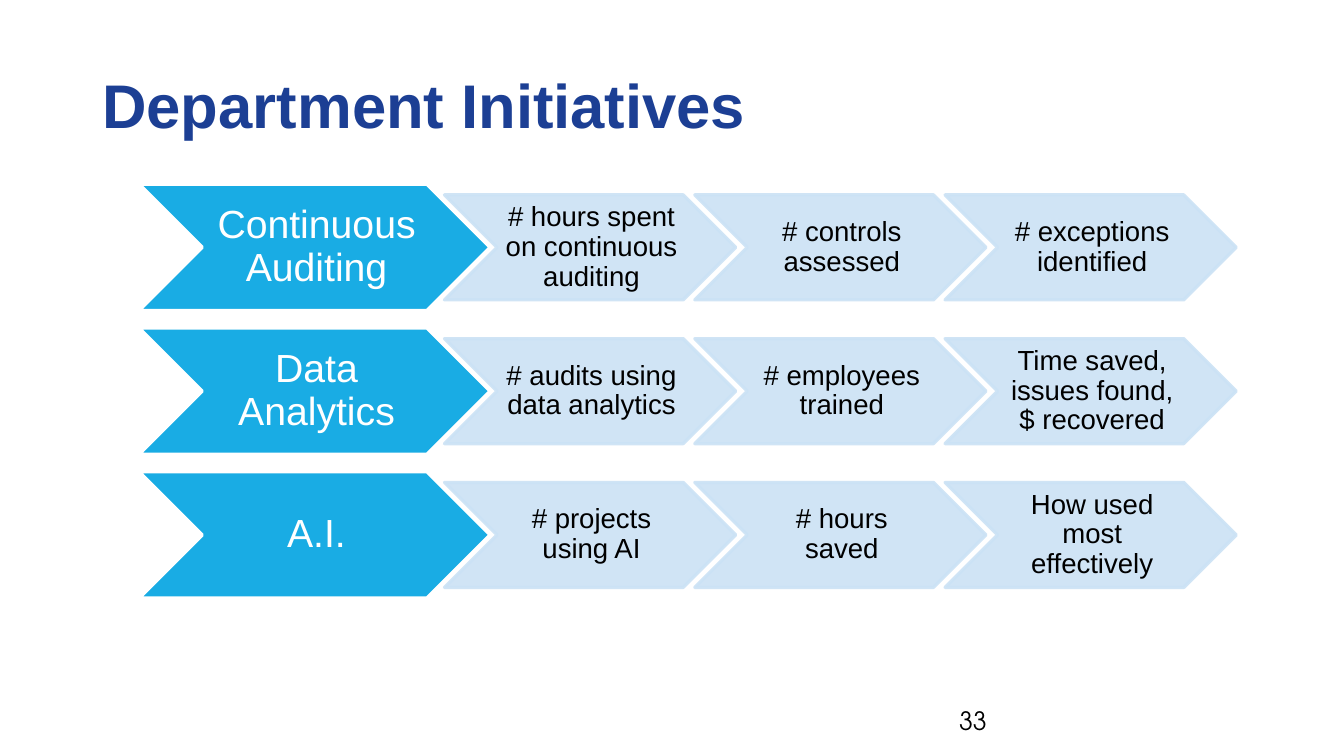
"""Build the Department Initiatives slide: three rows of chevrons with measures."""
from lxml import etree
from pptx import Presentation
from pptx.dml.color import RGBColor
from pptx.enum.shapes import MSO_SHAPE
from pptx.enum.text import MSO_ANCHOR, PP_ALIGN
from pptx.oxml.ns import qn
from pptx.util import Pt

CHEVRON = MSO_SHAPE.CHEVRON
MIDDLE, BOTTOM = MSO_ANCHOR.MIDDLE, MSO_ANCHOR.BOTTOM
LEFT, CENTER = PP_ALIGN.LEFT, PP_ALIGN.CENTER

TITLE = "Department Initiatives"
PAGE_NUMBER = "33"
INITIATIVES = [
    ("Continuous Auditing",
     ["# hours spent on continuous auditing", "# controls assessed", "# exceptions identified"]),
    ("Data Analytics",
     ["# audits using data analytics", "# employees trained",
      "Time saved, issues found, $ recovered"]),
    ("A.I.",
     ["# projects using AI", "# hours saved", "How used most effectively"]),
]

COLORS = {"title": "1C3F94", "initiative": "19ACE4", "measure": "CBE2F5",
          "white": "FFFFFF", "black": "000000"}
BODY_FONT, NUMBER_FONT = "Arial", "TeX Gyre Adventor"

ROW_TOP, ROW_PITCH = 131.6, 102.7
HEAD_LEFT, HEAD_WIDTH, HEAD_HEIGHT = 99.4, 250.6, 90.2
HEAD_TEXT_WIDTH = 150.4
MEASURE_LEFT, MEASURE_PITCH = 317.5, 178.8
MEASURE_WIDTH, MEASURE_HEIGHT = 208, 75
MEASURE_TEXT_WIDTH = 125.2
LINE_WIDTH = 2.33


def color(name):
    return RGBColor.from_string(COLORS[name])


def add_text(page, frame, text, size, ink, insets, font=BODY_FONT,
             align=LEFT, anchor=MIDDLE, bold=False, spacing=1.0):
    box = page.shapes.add_textbox(*map(Pt, frame))
    body = box.text_frame
    body.word_wrap = True
    body.vertical_anchor = anchor
    body.margin_left, body.margin_top, body.margin_right, body.margin_bottom = map(Pt, insets)
    para = body.paragraphs[0]
    para.alignment = align
    para.line_spacing = spacing
    span = para.add_run()
    span.text = text
    span.font.name = font
    span.font.size = Pt(size)
    span.font.bold = bold
    span.font.color.rgb = color(ink)


def add_chevron(page, frame, fill, line, opacity=100):
    chevron = page.shapes.add_shape(CHEVRON, *map(Pt, frame))
    chevron.shadow.inherit = False
    chevron.adjustments[0] = 0.5
    chevron.fill.solid()
    chevron.fill.fore_color.rgb = color(fill)
    chevron.line.color.rgb = color(line)
    chevron.line.width = Pt(LINE_WIDTH)
    if opacity < 100:
        for tint in chevron.element.spPr.iter(qn("a:srgbClr")):
            etree.SubElement(tint, qn("a:alpha"), val=str(opacity * 1000))


def add_label(page, frame, text, text_width, size, ink, insets):
    left, top, width, height = frame
    text_left = left + (width - text_width) / 2
    add_text(page, (text_left, top, text_width, height), text, size, ink, insets,
             align=CENTER, spacing=0.9)


def add_initiative(page, top, initiative, measures):
    head = (HEAD_LEFT, top, HEAD_WIDTH, HEAD_HEIGHT)
    add_chevron(page, head, "initiative", "white")
    add_label(page, head, initiative, HEAD_TEXT_WIDTH, 28, "white", (2.8, 1.4, 0, 1.4))
    measure_top = top + (HEAD_HEIGHT - MEASURE_HEIGHT) / 2
    for column, measure in enumerate(measures):
        frame = (MEASURE_LEFT + column * MEASURE_PITCH, measure_top,
                 MEASURE_WIDTH, MEASURE_HEIGHT)
        add_chevron(page, frame, "measure", "measure", opacity=90)
        add_label(page, frame, measure, MEASURE_TEXT_WIDTH, 19.7, "black", (2, 1, 0, 1))


def main():
    deck = Presentation()
    deck.slide_width, deck.slide_height = Pt(960), Pt(540)
    page = deck.slides.add_slide(deck.slide_layouts[6])
    add_text(page, (66, 28.8, 828, 72), TITLE, 44, "title", (7.2, 0, 7.2, 0),
             anchor=BOTTOM, bold=True)
    for row, (initiative, measures) in enumerate(INITIATIVES):
        add_initiative(page, ROW_TOP + row * ROW_PITCH, initiative, measures)
    add_text(page, (678, 500.5, 216, 28.8), PAGE_NUMBER, 18, "black", (7.2, 3.6, 7.2, 3.6),
             font=NUMBER_FONT)
    deck.save("out.pptx")


if __name__ == "__main__":
    main()
